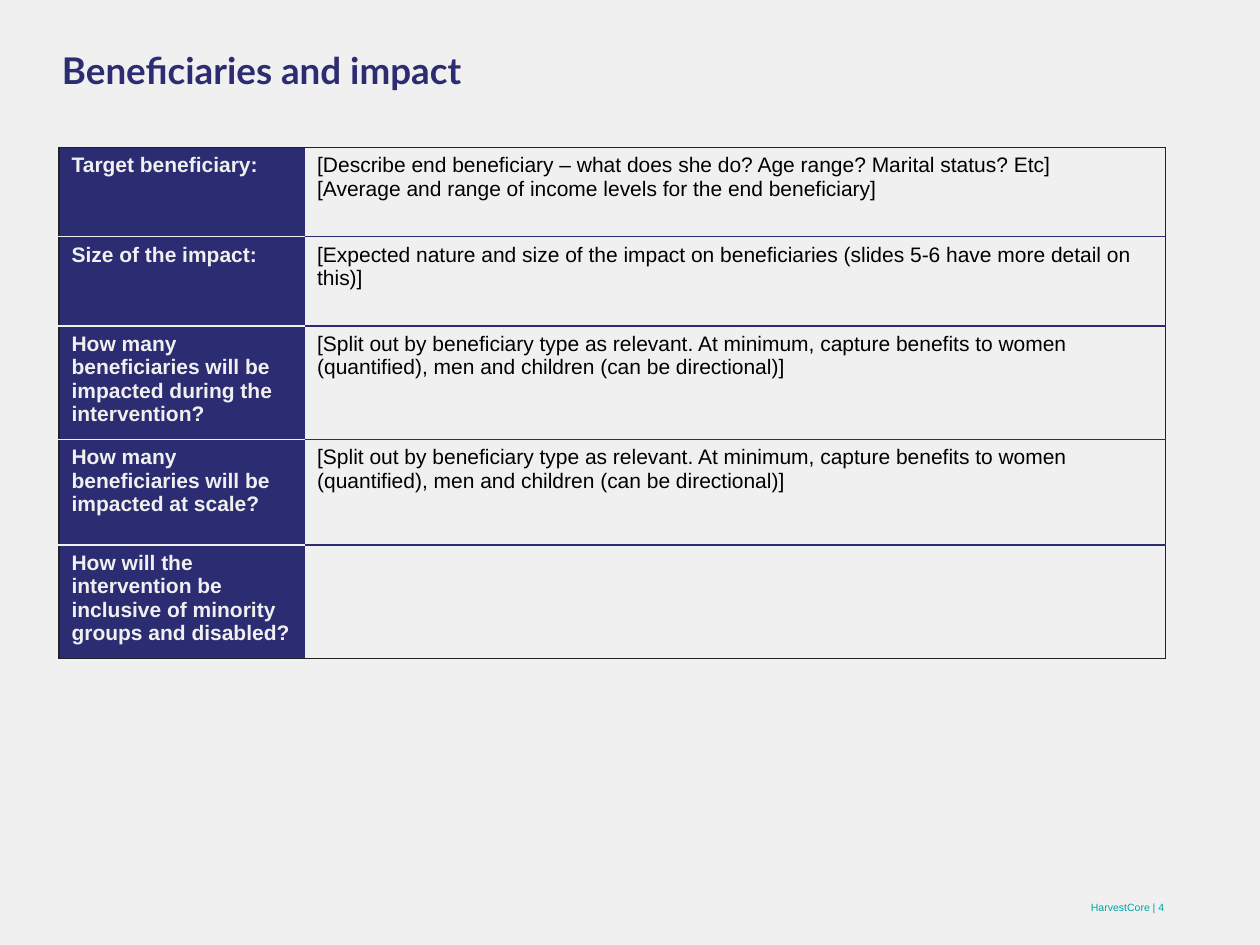
from lxml import etree
from pptx import Presentation
from pptx.dml.color import RGBColor
from pptx.enum.text import MSO_ANCHOR, PP_ALIGN
from pptx.oxml.ns import qn
from pptx.util import Cm, Pt

TOP, MIDDLE = MSO_ANCHOR.TOP, MSO_ANCHOR.MIDDLE
LEFT, RIGHT = PP_ALIGN.LEFT, PP_ALIGN.RIGHT

NAVY = RGBColor(0x2B, 0x2C, 0x71)
PALE = RGBColor(0xF0, 0xF0, 0xF0)
TEAL = RGBColor(0x00, 0xA5, 0xA3)
INK = RGBColor(0x22, 0x22, 0x22)
BLACK = RGBColor(0, 0, 0)

TITLE = "Beneficiaries and impact"
FOOTER = "HarvestCore | 4"
SPLIT = ("[Split out by beneficiary type as relevant. At minimum, capture benefits "
         "to women (quantified), men and children (can be directional)]")
QUESTIONS = [
    ("Target beneficiary:",
     "[Describe end beneficiary – what does she do? Age range? Marital status? Etc]\n"
     "[Average and range of income levels for the end beneficiary]"),
    ("Size of the impact:",
     "[Expected nature and size of the impact on beneficiaries "
     "(slides 5-6 have more detail on this)]"),
    ("How many beneficiaries will be impacted during the intervention?", SPLIT),
    ("How many beneficiaries will be impacted at scale?", SPLIT),
    ("How will the intervention be inclusive of minority groups and disabled?", ""),
]
COLUMN_WIDTHS = [4.95, 17.35]
ROW_HEIGHTS = [1.8, 1.8, 1.8, 2.13, 2.13]


def write(frame, text, font, size, color, bold=False, align=LEFT):
    frame.text = text
    for paragraph in frame.paragraphs:
        paragraph.alignment = align
        for target in [paragraph, *paragraph.runs]:
            target.font.name = font
            target.font.size = Pt(size)
            target.font.color.rgb = color
            target.font.bold = bold


def add_label(slide, box, anchor, *style, **options):
    frame = slide.shapes.add_textbox(*(Cm(v) for v in box)).text_frame
    frame.word_wrap = True
    frame.vertical_anchor = anchor
    write(frame, *style, **options)


def set_borders(cell, **colors):
    properties = cell._tc.get_or_add_tcPr()
    for position, side in enumerate("LRTB"):
        line = etree.Element(qn(f"a:ln{side}"), w=str(Pt(1)))
        if colors.get(side) is None:
            etree.SubElement(line, qn("a:noFill"))
        else:
            fill = etree.SubElement(line, qn("a:solidFill"))
            etree.SubElement(fill, qn("a:srgbClr"), val=str(colors[side]))
        properties.insert(position, line)


def add_questions(slide):
    table = slide.shapes.add_table(
        len(QUESTIONS), len(COLUMN_WIDTHS), Cm(1.19), Cm(2.97),
        Cm(sum(COLUMN_WIDTHS)), Cm(sum(ROW_HEIGHTS))).table
    table.first_row = table.horz_banding = False
    for column, width in zip(table.columns, COLUMN_WIDTHS):
        column.width = Cm(width)
    last = len(QUESTIONS) - 1
    for index, (question, answer) in enumerate(QUESTIONS):
        table.rows[index].height = Cm(ROW_HEIGHTS[index])
        heading, detail = table.cell(index, 0), table.cell(index, 1)
        heading.fill.solid()
        heading.fill.fore_color.rgb = NAVY
        detail.fill.background()
        write(heading.text_frame, question, "Arial", 12, PALE, bold=True)
        write(detail.text_frame, answer, "Arial", 12, BLACK)
        for cell, divider, sides in [(heading, PALE, {"L": INK}),
                                     (detail, NAVY, {"R": INK})]:
            set_borders(cell, T=INK if index == 0 else divider,
                        B=INK if index == last else divider, **sides)


def main():
    deck = Presentation()
    deck.slide_width, deck.slide_height = Cm(25.4), Cm(19.05)
    slide = deck.slides.add_slide(deck.slide_layouts[6])
    slide.background.fill.solid()
    slide.background.fill.fore_color.rgb = PALE
    add_label(slide, (1, 0.84, 22.53, 1.47), TOP, TITLE, "Lato", 21, NAVY, bold=True)
    add_label(slide, (17.8, 17.78, 5.92, 1.02), MIDDLE, FOOTER, "Arial", 6, TEAL,
              align=RIGHT)
    add_questions(slide)
    deck.save("out.pptx")


if __name__ == "__main__":
    main()
